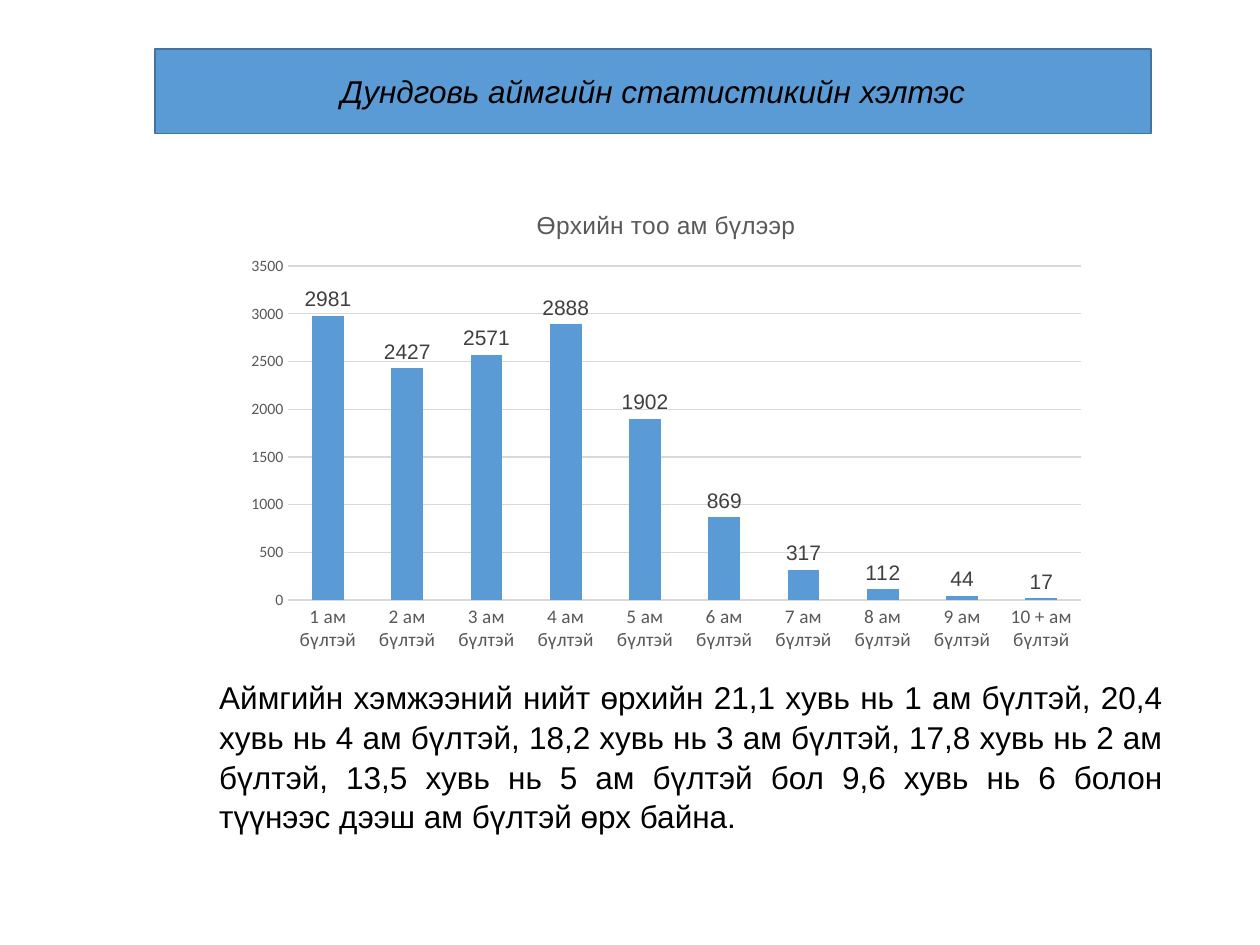
from pptx import Presentation
from pptx.chart.data import CategoryChartData
from pptx.dml.color import RGBColor
from pptx.enum.chart import XL_CHART_TYPE, XL_LABEL_POSITION, XL_TICK_MARK
from pptx.enum.text import MSO_ANCHOR, MSO_AUTO_SIZE, PP_ALIGN
from pptx.util import Cm, Pt

BLUE, DARK_BLUE, BLACK = "5B9BD5", "43739E", "000000"
GREY, DARK_GREY, LIGHT_GREY = "595959", "404040", "D9D9D9"

HEADING = "Дундговь аймгийн статистикийн хэлтэс"
CHART_TITLE = "Өрхийн тоо ам бүлээр"
HOUSEHOLDS = [2981, 2427, 2571, 2888, 1902, 869, 317, 112, 44, 17]
SIZES = [f"{size} ам бүлтэй" for size in [*range(1, 10), "10 +"]]
SUMMARY = (
    "Аймгийн хэмжээний нийт өрхийн 21,1 хувь нь 1 ам бүлтэй, "
    "20,4 хувь нь 4 ам бүлтэй, 18,2 хувь нь 3 ам бүлтэй, "
    "17,8 хувь нь 2 ам бүлтэй, 13,5 хувь нь 5 ам бүлтэй бол "
    "9,6 хувь нь 6 болон түүнээс дээш ам бүлтэй өрх байна."
)


def color(hex_value):
    return RGBColor.from_string(hex_value)


def apply(target, values):
    """Set every attribute named in values on target."""
    for name, value in values.items():
        setattr(target, name, value)


def format_font(font, size, hex_value, name="Arial", **values):
    apply(font, {"size": Pt(size), "name": name, "bold": False, **values})
    font.color.rgb = color(hex_value)


class SlideBuilder:
    """Holds the text style and the slide being filled."""

    text_size = 18

    def __init__(self, presentation):
        title_only = presentation.slide_layouts[5]
        self.slide = presentation.slides.add_slide(title_only)

    def fill_text(self, shape, text, alignment, frame_values, line_spacing=1.0, **font_values):
        frame = shape.text_frame
        apply(frame, {"word_wrap": True, **frame_values})
        paragraph = frame.paragraphs[0]
        paragraph.text = text
        apply(paragraph, {"alignment": alignment, "line_spacing": line_spacing,
                          "space_before": Pt(0)})
        format_font(paragraph.runs[0].font, self.text_size, BLACK, **font_values)

    def title(self, text, left, top, width, height):
        shape = self.slide.shapes.title
        apply(shape, {"left": left, "top": top, "width": width, "height": height})
        shape.fill.solid()
        shape.fill.fore_color.rgb = color(BLUE)
        shape.line.color.rgb = color(DARK_BLUE)
        shape.line.width = Pt(1)
        frame_values = {"vertical_anchor": MSO_ANCHOR.MIDDLE,
                        "auto_size": MSO_AUTO_SIZE.NONE}
        self.fill_text(shape, text, PP_ALIGN.CENTER, frame_values, italic=True)

    def text(self, text, left, top, width, height):
        shape = self.slide.shapes.add_textbox(left, top, width, height)
        frame_values = {"auto_size": MSO_AUTO_SIZE.SHAPE_TO_FIT_TEXT}
        self.fill_text(shape, text, PP_ALIGN.JUSTIFY, frame_values, line_spacing=1.05)

    def column_chart(self, title, categories, values, left, top, width, height):
        data = CategoryChartData()
        data.categories = categories
        data.add_series("Series 1", values)
        chart = self.slide.shapes.add_chart(
            XL_CHART_TYPE.COLUMN_CLUSTERED, left, top, width, height, data).chart
        format_font(chart.font, 10, BLACK, "Calibri")
        chart.has_legend = False
        chart.has_title = True
        chart.chart_title.include_in_layout = False
        paragraph = chart.chart_title.text_frame.paragraphs[0]
        paragraph.text = title
        format_font(paragraph.runs[0].font, 14, GREY)

        for axis, size in ((chart.category_axis, 11), (chart.value_axis, 9)):
            apply(axis, {"major_tick_mark": XL_TICK_MARK.NONE,
                         "minor_tick_mark": XL_TICK_MARK.NONE})
            axis.format.line.fill.background()
            format_font(axis.tick_labels.font, size, GREY, "Calibri")
        apply(chart.value_axis, {"minimum_scale": 0, "maximum_scale": 3500,
                                 "major_unit": 500})
        gridline = chart.value_axis.major_gridlines.format.line
        gridline.color.rgb = color(LIGHT_GREY)
        gridline.width = Pt(0.75)

        plot = chart.plots[0]
        apply(plot, {"gap_width": 150, "vary_by_categories": False,
                     "has_data_labels": True})
        apply(plot.data_labels, {"show_value": True,
                                 "position": XL_LABEL_POSITION.OUTSIDE_END})
        format_font(plot.data_labels.font, 12, DARK_GREY)
        fill = plot.series[0].format.fill
        fill.solid()
        fill.fore_color.rgb = color(BLUE)


def main():
    presentation = Presentation()
    apply(presentation, {"slide_width": Cm(25.4), "slide_height": Cm(19.05)})
    builder = SlideBuilder(presentation)
    builder.title(HEADING, Cm(3.12), Cm(0.99), Cm(20.09), Cm(1.7))
    builder.column_chart(CHART_TITLE, SIZES, HOUSEHOLDS,
                         Cm(4.72), Cm(3.81), Cm(17.42), Cm(9.53))
    builder.text(SUMMARY, Cm(4.17), Cm(13.51), Cm(19.53), Cm(3.33))
    presentation.save("out.pptx")


if __name__ == "__main__":
    main()
